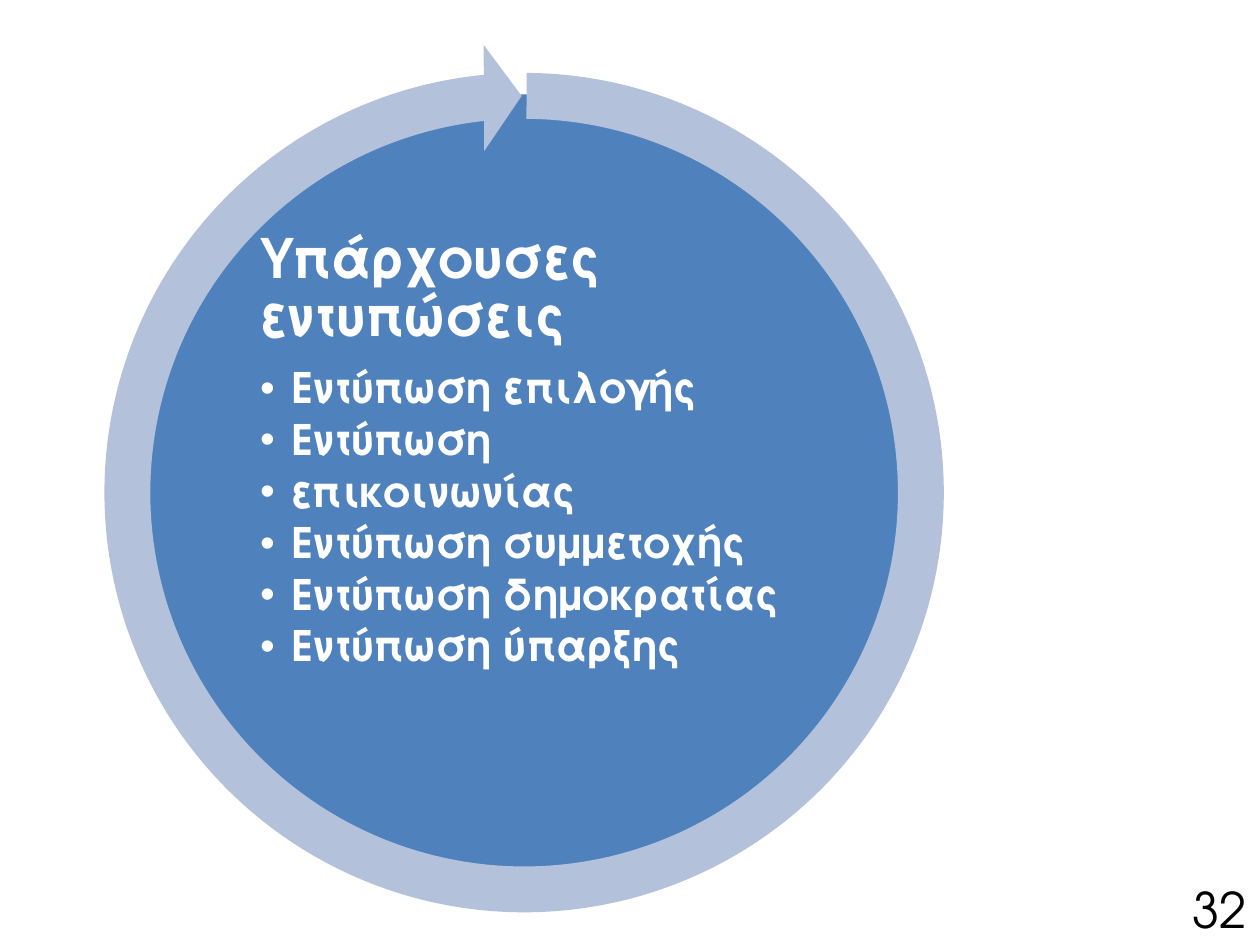
from dataclasses import dataclass

from lxml import etree
from pptx import Presentation
from pptx.dml.color import RGBColor
from pptx.enum.shapes import MSO_SHAPE
from pptx.enum.text import MSO_ANCHOR, MSO_AUTO_SIZE, PP_ALIGN
from pptx.oxml.ns import qn
from pptx.util import Inches, Pt

ELLIPSE = MSO_SHAPE.OVAL
CIRCULAR_ARROW = MSO_SHAPE.CIRCULAR_ARROW
TOP = MSO_ANCHOR.TOP
NO_AUTOFIT = MSO_AUTO_SIZE.NONE
FIT_SHAPE = MSO_AUTO_SIZE.SHAPE_TO_FIT_TEXT
LEFT, CENTER = PP_ALIGN.LEFT, PP_ALIGN.CENTER

FONT = "TeX Gyre Adventor"
COLORS = {"disc": "4F81BD", "ring": "B3C1DB", "light": "FFFFFF", "dark": "000000"}
LINE_SPACING = 0.9
BULLET_INDENT = Inches(0.25)
CENTER_Y = 3.91
ARROW_ADJUSTMENTS = (0.051, 3.275, 158.512, 162.213, 0.059)


@dataclass(frozen=True)
class Square:
    """A square given by its centre and side, in inches."""
    center_x: float
    side: float

    def box(self) -> tuple:
        half = self.side / 2
        return tuple(Inches(value) for value in
                     (self.center_x - half, CENTER_Y - half, self.side, self.side))


@dataclass(frozen=True)
class TextStyle:
    size: float
    color: str
    bold: bool = False
    space_after: float = 0  # share of the text size
    bullet: bool = False
    alignment: PP_ALIGN = LEFT


DISC = Square(4.14, 6.35)
TEXT_AREA = Square(4.14, 4.23)
RING = Square(4.16, 7.14)

HEADING = TextStyle(31, "light", bold=True, space_after=0.35)
ITEM = TextStyle(24, "light", bold=True, space_after=0.15, bullet=True)
NUMBER = TextStyle(28, "dark", alignment=CENTER)

LINES = (
    ("Υπάρχουσες εντυπώσεις", HEADING),
    ("Εντύπωση επιλογής", ITEM),
    ("Εντύπωση", ITEM),
    ("επικοινωνίας", ITEM),
    ("Εντύπωση συμμετοχής", ITEM),
    ("Εντύπωση δημοκρατίας", ITEM),
    ("Εντύπωση ύπαρξης", ITEM),
)


def color(name: str) -> RGBColor:
    return RGBColor.from_string(COLORS[name])


def set_bullet(paragraph, visible: bool) -> None:
    properties = paragraph._p.get_or_add_pPr()
    indent = BULLET_INDENT if visible else 0
    properties.set("marL", str(indent))
    properties.set("indent", str(-indent))
    if visible:
        etree.SubElement(properties, qn("a:buChar")).set("char", "•")
    else:
        etree.SubElement(properties, qn("a:buNone"))


def write(paragraph, text: str, style: TextStyle) -> None:
    paragraph.level = 1 if style.bullet else 0
    set_bullet(paragraph, style.bullet)
    paragraph.alignment = style.alignment
    paragraph.line_spacing = LINE_SPACING
    paragraph.space_before = Pt(0)
    paragraph.space_after = Pt(round(style.size * style.space_after, 2))
    run = paragraph.add_run()
    run.text = text
    run.font.name = FONT
    run.font.size = Pt(style.size)
    run.font.bold = style.bold
    run.font.color.rgb = color(style.color)


def add_figure(slide, kind: MSO_SHAPE, area: Square, fill: str):
    """Add a flat preset shape without an outline."""
    shape = slide.shapes.add_shape(kind, *area.box())
    shape.shadow.inherit = False
    shape.fill.solid()
    shape.fill.fore_color.rgb = color(fill)
    shape.line.fill.background()
    return shape


def add_list(slide) -> None:
    """Fill the body placeholder and bring it in front of the disc."""
    body = slide.placeholders[1]
    body.left, body.top, body.width, body.height = TEXT_AREA.box()
    slide.shapes._spTree.append(body._element)
    frame = body.text_frame
    frame.word_wrap = True
    frame.auto_size = NO_AUTOFIT
    frame.vertical_anchor = TOP
    frame.margin_left = frame.margin_right = Inches(0.04)
    frame.margin_top = frame.margin_bottom = Inches(0.04)
    for index, (text, style) in enumerate(LINES):
        paragraph = frame.add_paragraph() if index else frame.paragraphs[0]
        write(paragraph, text, style)


def add_slide_number(slide) -> None:
    box = slide.shapes.add_textbox(Inches(9.36), Inches(6.98), Inches(0.64), Inches(0.52))
    box.text_frame.word_wrap = False
    box.text_frame.auto_size = FIT_SHAPE
    write(box.text_frame.paragraphs[0], "32", NUMBER)


def main() -> None:
    presentation = Presentation()
    presentation.slide_width, presentation.slide_height = Inches(10), Inches(7.5)
    slide = presentation.slides.add_slide(presentation.slide_layouts[1])
    title = slide.shapes.title._element
    title.getparent().remove(title)

    add_slide_number(slide)
    disc = add_figure(slide, ELLIPSE, DISC, "disc")
    disc.line.color.rgb = color("light")
    disc.line.width = Pt(2)
    add_list(slide)
    ring = add_figure(slide, CIRCULAR_ARROW, RING, "ring")
    for index, value in enumerate(ARROW_ADJUSTMENTS):
        ring.adjustments[index] = value
    presentation.save("out.pptx")


if __name__ == "__main__":
    main()
